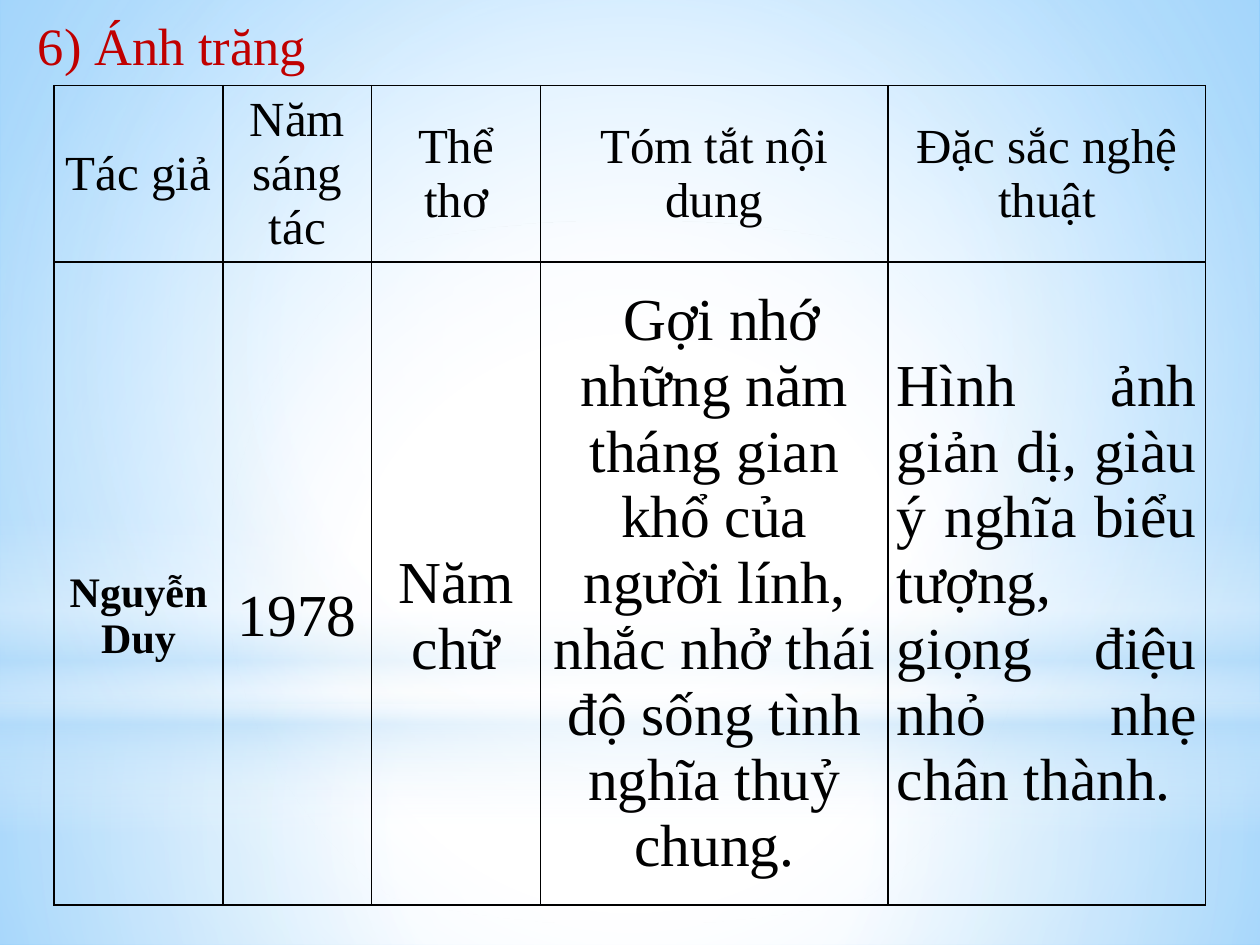
from lxml.etree import fromstring
from pptx import Presentation
from pptx.dml.color import RGBColor
from pptx.enum.shapes import MSO_SHAPE
from pptx.enum.text import MSO_ANCHOR, MSO_AUTO_SIZE, PP_ALIGN
from pptx.oxml.ns import qn
from pptx.util import Inches, Pt

NS = 'xmlns:a="http://schemas.openxmlformats.org/drawingml/2006/main"'


def set_gradient(element, stops, focus=None):
    """Swap the solid fill for a gradient: radial to focus, else top to bottom."""
    gs = "".join(
        f'<a:gs pos="{pos * 1000}"><a:srgbClr val="{color}">'
        f'<a:alpha val="{alpha * 1000}"/></a:srgbClr></a:gs>'
        for pos, color, alpha in stops)
    if focus:
        rect = " ".join(f'{side}="{v * 1000}"' for side, v in zip("ltrb", focus))
        way = f'<a:path path="circle"><a:fillToRect {rect}/></a:path>'
    else:
        way = '<a:lin ang="5400000" scaled="0"/>'
    solid = next(element.iter(qn("a:solidFill")))
    solid.getparent().replace(solid, fromstring(
        f'<a:gradFill {NS} rotWithShape="1"><a:gsLst>{gs}</a:gsLst>{way}</a:gradFill>'))


def add_run(p, text, size, color="000000", bold=False):
    r = p.add_run()
    r.text = text
    r.font.name = "Times New Roman"
    r.font.size = Pt(size)
    r.font.bold = bold
    r.font.color.rgb = RGBColor.from_string(color)


prs = Presentation()
prs.slide_width, prs.slide_height = Inches(10), Inches(7.5)
s = prs.slides.add_slide(prs.slide_layouts[5])

# Background
s.background.fill.solid()
s.background.fill.fore_color.rgb = RGBColor.from_string("FFFFFF")
set_gradient(s.element.find(".//" + qn("p:bgPr")),
             [(0, "FFFFFF", 100), (36, "FFFFFF", 100), (100, "63BCFF", 100)],
             (24, 44, 24, 12))

# Full-width sky bands and glow: shape, top, height, stops, focus
CENTER = (50, 50, 50, 50)
bands = [
    (MSO_SHAPE.RECTANGLE, 5.58, 1.92,
     [(0, "FFFFFF", 91), (37, "FFFFFF", 76), (100, "B4DCFA", 79)], CENTER),
    (MSO_SHAPE.RECTANGLE, 0, 5.58,
     [(0, "FFFFFF", 89), (48, "FFFFFF", 62), (100, "B4DCFA", 79)], CENTER),
    (MSO_SHAPE.RECTANGLE, 4.12, 2.5,
     [(0, "FFFFFF", 0), (29, "FFFFFF", 30), (45, "B4DCFA", 40),
      (55, "FFFFFF", 26), (65, "B4DCFA", 60), (100, "FFFFFF", 0)], None),
    (MSO_SHAPE.OVAL, 1.75, 5.58,
     [(0, "FFFFFF", 100), (56, "FFFFFF", 0)], CENTER),
]
for kind, top, height, stops, focus in bands:
    sp = s.shapes.add_shape(kind, 0, Inches(top), prs.slide_width, Inches(height))
    sp.shadow.inherit = False
    sp.line.fill.background()
    sp.fill.solid()
    sp.fill.fore_color.rgb = RGBColor.from_string("FFFFFF")
    set_gradient(sp.element, stops, focus)

# Title, brought in front of the bands
title = s.shapes.title
title.left, title.top = Inches(0.2), Inches(0.05)
title.width, title.height = Inches(2.35), Inches(0.61)
title.element.getparent().append(title.element)
tf = title.text_frame
tf.word_wrap = False
tf.auto_size = MSO_AUTO_SIZE.SHAPE_TO_FIT_TEXT
tf.vertical_anchor = MSO_ANCHOR.TOP
tf.paragraphs[0].alignment = PP_ALIGN.LEFT
add_run(tf.paragraphs[0], "6) Ánh trăng", 30, "C00000")

# Table: text, size, bold, alignment, top inset
C, J = PP_ALIGN.CENTER, PP_ALIGN.JUSTIFY
headers = ["Tác giả", "Năm sáng tác", "Thể thơ", "Tóm tắt nội dung",
           "Đặc sắc nghệ thuật"]
rows = [
    [(text, 28, False, C, 0) for text in headers],
    [("Nguyễn Duy", 24, True, C, 0.52),
     ("1978", 34, False, C, 0.52),
     ("Năm chữ", 34, False, C, 0.52),
     (" Gợi nhớ những năm tháng gian khổ của người lính, nhắc nhở thái độ "
      "sống tình nghĩa thuỷ chung.", 34, False, C, 0),
     ("Hình ảnh giản dị, giàu ý nghĩa biểu tượng, giọng điệu nhỏ nhẹ "
      "chân thành.", 34, False, J, 0)],
]
table = s.shapes.add_table(2, 5, Inches(0.43), Inches(0.68),
                           Inches(9.14), Inches(6.5)).table
table.first_row = table.horz_banding = False
for column, width in zip(table.columns, [1.34, 1.18, 1.34, 2.76, 2.52]):
    column.width = Inches(width)
for row, height in zip(table.rows, [1.4, 5.1]):
    row.height = Inches(height)

for row, contents in zip(table.rows, rows):
    for cell, (text, size, bold, align, inset) in zip(row.cells, contents):
        cell.fill.background()
        cell.vertical_anchor = MSO_ANCHOR.MIDDLE
        cell.margin_left = cell.margin_right = Inches(0.07)
        cell.margin_top, cell.margin_bottom = Inches(inset), 0
        p = cell.text_frame.paragraphs[0]
        p.alignment = align
        add_run(p, text, size, bold=bold)
        # Black one-point borders
        tc_pr = cell._tc.get_or_add_tcPr()
        for i, edge in enumerate(("lnL", "lnR", "lnT", "lnB")):
            tc_pr.insert(i, fromstring(
                f'<a:{edge} {NS} w="12700"><a:solidFill><a:srgbClr val="000000"/>'
                f'</a:solidFill></a:{edge}>'))

prs.save("out.pptx")
